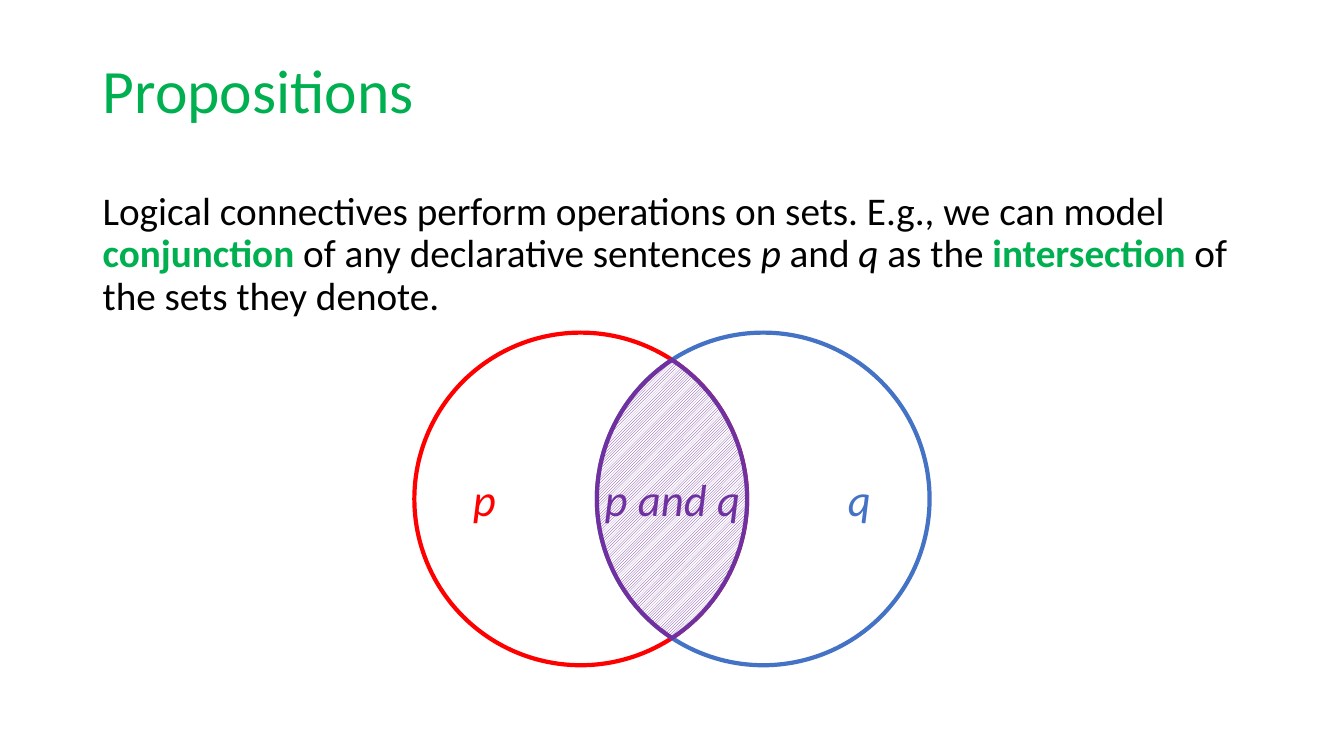
"""Build a slide showing conjunction as the intersection of two sets."""
from math import acos, cos, pi, sin

from pptx import Presentation
from pptx.dml.color import RGBColor
from pptx.enum.dml import MSO_PATTERN
from pptx.enum.shapes import MSO_SHAPE
from pptx.enum.text import MSO_ANCHOR, PP_ALIGN
from pptx.util import Inches, Pt

GREEN, BLACK, WHITE = "00B050", "000000", "FFFFFF"
RED, BLUE, PURPLE = "FF0000", "4472C4", "7030A0"


def color(value):
    """Turn a hex string into a colour."""
    return RGBColor.from_string(value)


def add_span(para, text, size, ink, bold=False, italic=False):
    """Add one formatted run to a paragraph."""
    span = para.add_run()
    span.text = text
    font = span.font
    font.name, font.size = "Calibri", Pt(size)
    font.bold, font.italic = bold, italic
    font.color.rgb = color(ink)


deck = Presentation()
deck.slide_width, deck.slide_height = Inches(13.33), Inches(7.5)
page = deck.slides.add_slide(deck.slide_layouts[5])
shapes = page.shapes

title = shapes.title
title.left, title.top = Inches(0.92), Inches(0)
title.width, title.height = Inches(11.5), Inches(1.85)
title.text_frame.vertical_anchor = MSO_ANCHOR.MIDDLE
para = title.text_frame.paragraphs[0]
para.alignment = PP_ALIGN.LEFT
para.line_spacing = 0.9
add_span(para, "Propositions", 44, GREEN)

body = shapes.add_textbox(Inches(0.92), Inches(1.85), Inches(11.5), Inches(4.91))
body.text_frame.word_wrap = True
para = body.text_frame.paragraphs[0]
para.line_spacing = 0.9
para.space_before = Pt(10)
for text, ink, bold, italic in [
    ("Logical connectives perform operations on sets. E.g., we can model ", BLACK, False, False),
    ("conjunction", GREEN, True, False),
    (" of any declarative sentences ", BLACK, False, False),
    ("p ", BLACK, False, True),
    ("and ", BLACK, False, False),
    ("q ", BLACK, False, True),
    ("as the ", BLACK, False, False),
    ("intersection", GREEN, True, False),
    (" of the sets they denote.", BLACK, False, False),
]:
    add_span(para, text, 28, ink, bold, italic)

radius, center_y = 1.65, 4.95
p_center, q_center = 5.76, 7.57
for name, center, ink, align in [
    ("p", p_center, RED, PP_ALIGN.LEFT),
    ("q", q_center, BLUE, PP_ALIGN.RIGHT),
]:
    circle = shapes.add_shape(
        MSO_SHAPE.OVAL, Inches(center - radius), Inches(center_y - radius),
        Inches(2 * radius), Inches(2 * radius))
    circle.shadow.inherit = False
    circle.fill.background()
    circle.line.color.rgb = color(ink)
    circle.line.width = Pt(3)
    circle.text_frame.vertical_anchor = MSO_ANCHOR.MIDDLE
    para = circle.text_frame.paragraphs[0]
    para.alignment = align
    add_span(para, name, 32, ink, italic=True)

half_angle = acos((q_center - p_center) / 2 / radius)
steps = 40
outline = []
for center, start in [(p_center, -half_angle), (q_center, pi - half_angle)]:
    for step in range(steps):
        angle = start + 2 * half_angle * step / steps
        outline.append((Inches(center + radius * cos(angle)),
                        Inches(center_y + radius * sin(angle))))
builder = shapes.build_freeform(*outline[0])
builder.add_line_segments(outline[1:], close=True)
lens = builder.convert_to_shape()
lens.shadow.inherit = False
lens.fill.patterned()
lens.fill.pattern = MSO_PATTERN.LIGHT_UPWARD_DIAGONAL
lens.fill.fore_color.rgb = color(PURPLE)
lens.fill.back_color.rgb = color(WHITE)
lens.line.color.rgb = color(PURPLE)
lens.line.width = Pt(3)

label = shapes.add_textbox(Inches(5.89), Inches(4.63), Inches(1.56), Inches(0.64))
label.text_frame.word_wrap = False
para = label.text_frame.paragraphs[0]
para.alignment = PP_ALIGN.CENTER
add_span(para, "p and q", 32, PURPLE, italic=True)

deck.save("out.pptx")
